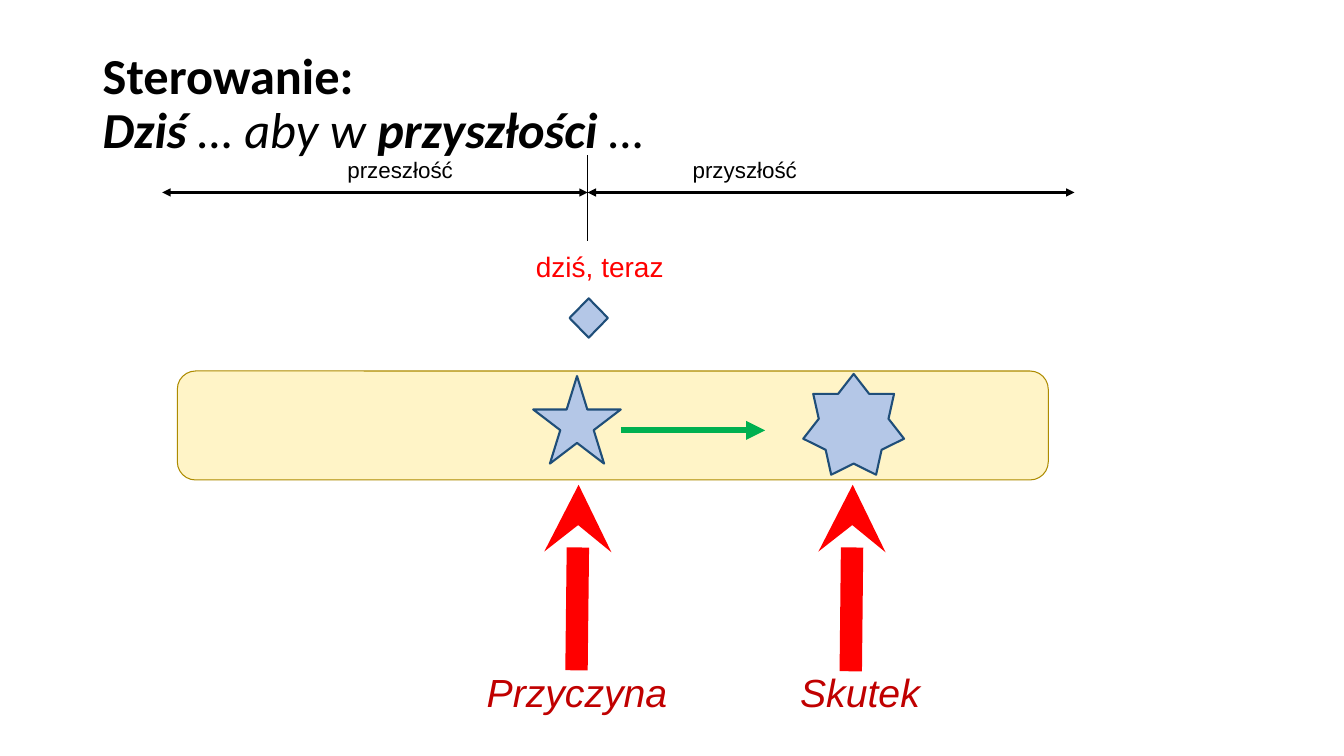
from dataclasses import dataclass
from typing import Optional

from lxml.etree import SubElement
from pptx import Presentation
from pptx.dml.color import RGBColor
from pptx.enum.shapes import MSO_CONNECTOR as Connector, MSO_SHAPE as Shape
from pptx.enum.text import MSO_ANCHOR as Anchor, MSO_AUTO_SIZE as AutoSize, PP_ALIGN as Align
from pptx.oxml.ns import qn
from pptx.util import Pt

BLACK = "000000"
RED = "FF0000"
DARK_RED = "C00000"
GREEN = "00B050"
BLUE = "B4C7E7"
NAVY = "1F4E79"


@dataclass
class Figure:
    kind: Shape
    left: float
    top: float
    width: float
    height: float
    fill: str = BLUE
    line: str = NAVY
    weight: float = 1.5


@dataclass
class Arrow:
    x1: float
    y1: float
    x2: float
    y2: float
    color: str
    weight: float
    head: Optional[str] = None
    tail: Optional[str] = None


@dataclass
class Label:
    text: str
    left: float
    top: float
    width: float
    height: float
    size: float
    color: str
    inset: Optional[float] = None
    italic: bool = False


TIMELINE_Y = 137.5
NOW_X = 419.8

BAR = Figure(Shape.ROUNDED_RECTANGLE, 126.7, 265, 622.1, 77.8, "FFF4C7", "AD8B00", 0.75)
MARKERS = [
    Figure(Shape.STAR_5_POINT, 380.9, 268.6, 62.6, 62.6),
    Figure(Shape.DIAMOND, 406.8, 213.1, 27.4, 28.1),
    Figure(Shape.STAR_7_POINT, 573.8, 267.1, 72, 72),
]
ARROWS = [
    Arrow(443.5, 307.4, 546.5, 307.4, GREEN, 4.5, tail="triangle"),
    Arrow(411.8, 478.8, 413.3, 346.3, RED, 16, tail="stealth"),
    Arrow(607.7, 479.5, 609.1, 346.3, RED, 16, tail="stealth"),
    Arrow(115.9, TIMELINE_Y, NOW_X, TIMELINE_Y, BLACK, 1.5, "triangle", "triangle"),
    Arrow(NOW_X, 110.9, NOW_X, 172.1, BLACK, 0.5),
    Arrow(NOW_X, TIMELINE_Y, 767.5, TIMELINE_Y, BLACK, 1.5, "triangle", "triangle"),
]
LABELS = [
    Label("Przyczyna", 340.6, 473.8, 155.5, 41, 28, DARK_RED, italic=True),
    Label("Skutek", 564.5, 473.8, 155.5, 41, 28, DARK_RED, italic=True),
    Label("dziś, teraz", 376.6, 175.7, 103.7, 28.8, 20, RED, 2.2),
    Label("przeszłość", 234, 108.7, 103.7, 25.2, 16, BLACK, 2.9),
    Label("przyszłość", 480.2, 109.4, 103.7, 23.8, 16, BLACK, 2.2),
]


def rgb(value: str) -> RGBColor:
    return RGBColor.from_string(value)


def add_run(p, text: str, font: str, size: float, color: str,
            bold: bool = False, italic: bool = False) -> None:
    r = p.add_run()
    r.text = text
    r.font.name = font
    r.font.size = Pt(size)
    r.font.color.rgb = rgb(color)
    r.font.bold = bold
    r.font.italic = italic


def write_title(sp) -> None:
    sp.left, sp.top, sp.width, sp.height = Pt(66.2), Pt(28.8), Pt(828), Pt(92.9)
    tf = sp.text_frame
    tf.word_wrap = True
    tf.auto_size = AutoSize.NONE
    tf.vertical_anchor = Anchor.MIDDLE
    p = tf.paragraphs[0]
    p.alignment = Align.LEFT
    p.line_spacing = 0.9
    add_run(p, "Sterowanie:", "Calibri", 36, BLACK, bold=True)
    p.add_line_break()
    for text, bold in [("Dziś ", True), ("… aby w ", False), ("przyszłości ", True), ("…", False)]:
        add_run(p, text, "Calibri", 36, BLACK, bold, italic=True)


def draw_figure(s, figure: Figure) -> None:
    sp = s.shapes.add_shape(figure.kind, Pt(figure.left), Pt(figure.top),
                            Pt(figure.width), Pt(figure.height))
    sp.shadow.inherit = False
    sp.fill.solid()
    sp.fill.fore_color.rgb = rgb(figure.fill)
    sp.line.color.rgb = rgb(figure.line)
    sp.line.width = Pt(figure.weight)


def draw_arrow(s, arrow: Arrow) -> None:
    sp = s.shapes.add_connector(Connector.STRAIGHT, Pt(arrow.x1), Pt(arrow.y1),
                                Pt(arrow.x2), Pt(arrow.y2))
    sp.line.color.rgb = rgb(arrow.color)
    sp.line.width = Pt(arrow.weight)
    ln = sp.line._get_or_add_ln()
    for tag, end in (("a:headEnd", arrow.head), ("a:tailEnd", arrow.tail)):
        if end:
            SubElement(ln, qn(tag), type=end)
    SubElement(sp._element.spPr, qn("a:effectLst"))


def draw_label(s, label: Label) -> None:
    sp = s.shapes.add_textbox(Pt(label.left), Pt(label.top), Pt(label.width), Pt(label.height))
    tf = sp.text_frame
    tf.word_wrap = True
    tf.auto_size = AutoSize.SHAPE_TO_FIT_TEXT
    p = tf.paragraphs[0]
    if label.inset is not None:
        tf.margin_left = tf.margin_right = tf.margin_top = tf.margin_bottom = Pt(label.inset)
        tf.vertical_anchor = Anchor.MIDDLE
        p.alignment = Align.CENTER
    add_run(p, label.text, "Arial", label.size, label.color, italic=label.italic)


def main() -> None:
    prs = Presentation()
    prs.slide_width, prs.slide_height = Pt(960), Pt(540)
    s = prs.slides.add_slide(prs.slide_layouts[5])
    write_title(s.shapes.title)
    draw_figure(s, BAR)
    for arrow in ARROWS:
        draw_arrow(s, arrow)
    for marker in MARKERS:
        draw_figure(s, marker)
    for label in LABELS:
        draw_label(s, label)
    prs.save("out.pptx")


if __name__ == "__main__":
    main()
